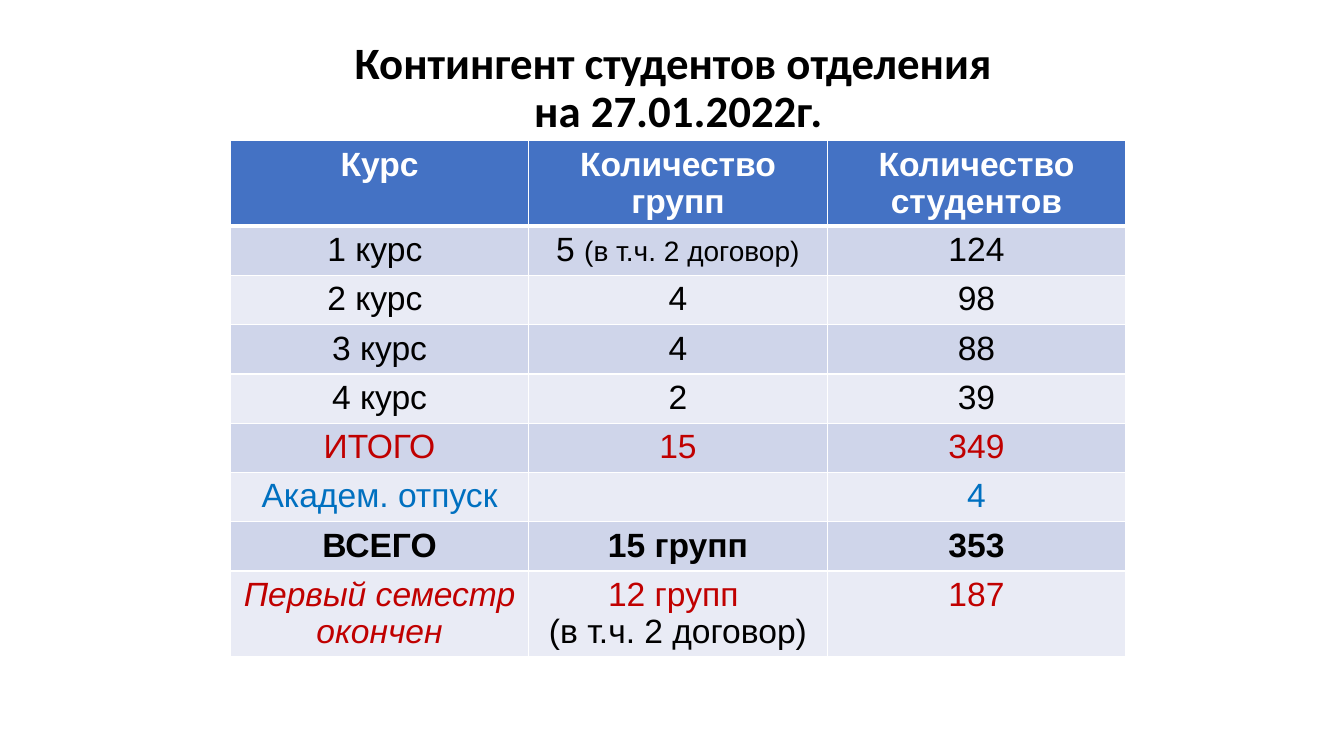
import lxml.etree
import pptx
import pptx.dml.color
import pptx.enum.text
import pptx.oxml.ns
import pptx.util

Pt = pptx.util.Pt
BLACK, WHITE, RED, BLUE = "000000", "FFFFFF", "C00000", "0070C0"
HEADER_FILL = "4472C4"
BAND_FILLS = ["CFD5EA", "E9EBF5"]
TITLE_TOP, TABLE_TOP = 14.4, 100.4
TALL_ROW, SHORT_ROW = 59.2, 35.2
COLUMN_WIDTH = 213.2


def color(value):
    return pptx.dml.color.RGBColor.from_string(value)


def run(text, ink=BLACK, size=24, bold=False, italic=False):
    return text, ink, size, bold, italic


def add_run(paragraph, text, ink, size, bold, italic, font="Arial"):
    text_run = paragraph.add_run()
    text_run.text = text
    text_run.font.name = font
    text_run.font.size = Pt(size)
    text_run.font.bold = bold
    text_run.font.italic = italic
    text_run.font.color.rgb = color(ink)


def add_title(slide, lines):
    shape = slide.shapes.add_textbox(
        Pt(160.6), Pt(TITLE_TOP), Pt(648), Pt(TABLE_TOP - TITLE_TOP)
    )
    frame = shape.text_frame
    frame.word_wrap = True
    frame.vertical_anchor = pptx.enum.text.MSO_ANCHOR.BOTTOM
    frame.margin_bottom = Pt(2.4)
    paragraph = frame.paragraphs[0]
    paragraph.alignment = pptx.enum.text.PP_ALIGN.CENTER
    paragraph.line_spacing = 0.9
    for index, line in enumerate(lines):
        if index:
            paragraph.add_line_break()
        add_run(paragraph, *run(line, size=32, bold=True), font="Calibri")


def set_border(cell, side, width):
    properties = cell._tc.get_or_add_tcPr()
    qn = pptx.oxml.ns.qn
    line = lxml.etree.SubElement(properties, qn(f"a:ln{side}"), w=str(int(Pt(width))))
    fill = lxml.etree.SubElement(line, qn("a:solidFill"))
    lxml.etree.SubElement(fill, qn("a:srgbClr"), val=WHITE)


def fill_cell(cell, paragraphs, fill, top_width, bottom_width):
    for side, width in zip("LRTB", (1, 1, top_width, bottom_width)):
        set_border(cell, side, width)
    cell.fill.solid()
    cell.fill.fore_color.rgb = color(fill)
    cell.margin_bottom = Pt(0)
    frame = cell.text_frame
    for index, runs in enumerate(paragraphs):
        paragraph = frame.add_paragraph() if index else frame.paragraphs[0]
        paragraph.alignment = pptx.enum.text.PP_ALIGN.CENTER
        paragraph.font.size = Pt(24)
        for text_run in runs:
            add_run(paragraph, *text_run)


def plain_row(*texts, **style):
    return [[[run(text, **style)] if text else []] for text in texts]


def add_table(slide, rows):
    heights = [TALL_ROW] + [SHORT_ROW] * (len(rows) - 2) + [TALL_ROW]
    columns = len(rows[0])
    table = slide.shapes.add_table(
        len(rows), columns, Pt(164.5), Pt(TABLE_TOP), Pt(COLUMN_WIDTH * columns), Pt(sum(heights))
    ).table
    for column in table.columns:
        column.width = Pt(COLUMN_WIDTH)
    for row_index, cells in enumerate(rows):
        table.rows[row_index].height = Pt(heights[row_index])
        fill = BAND_FILLS[(row_index - 1) % 2] if row_index else HEADER_FILL
        for column_index, paragraphs in enumerate(cells):
            fill_cell(
                table.cell(row_index, column_index), paragraphs, fill,
                top_width=3 if row_index == 1 else 1,
                bottom_width=3 if row_index == 0 else 1,
            )


def main():
    presentation = pptx.Presentation()
    presentation.slide_width = Pt(960)
    presentation.slide_height = Pt(540)
    slide = presentation.slides.add_slide(presentation.slide_layouts[6])
    add_title(slide, ["Контингент студентов отделения ", "на 27.01.2022г."])
    add_table(slide, [
        plain_row("Курс", "Количество групп", "Количество студентов", ink=WHITE, bold=True),
        [[[run("1 курс ")]], [[run("5 "), run("(в т.ч. 2 договор)", size=20)]], [[run("124")]]],
        plain_row("2 курс ", "4", "98"),
        plain_row("3 курс", "4", "88"),
        plain_row("4 курс", "2", "39"),
        plain_row("ИТОГО", "15", "349", ink=RED),
        plain_row("Академ. отпуск", "", "4", ink=BLUE),
        plain_row("ВСЕГО", "15 групп", "353", bold=True),
        [
            [[run("Первый семестр окончен", RED, italic=True)]],
            [[run("12 групп ", RED)], [run("(в т.ч. 2 договор)")]],
            [[run("187", RED)]],
        ],
    ])
    presentation.save("out.pptx")


if __name__ == "__main__":
    main()
